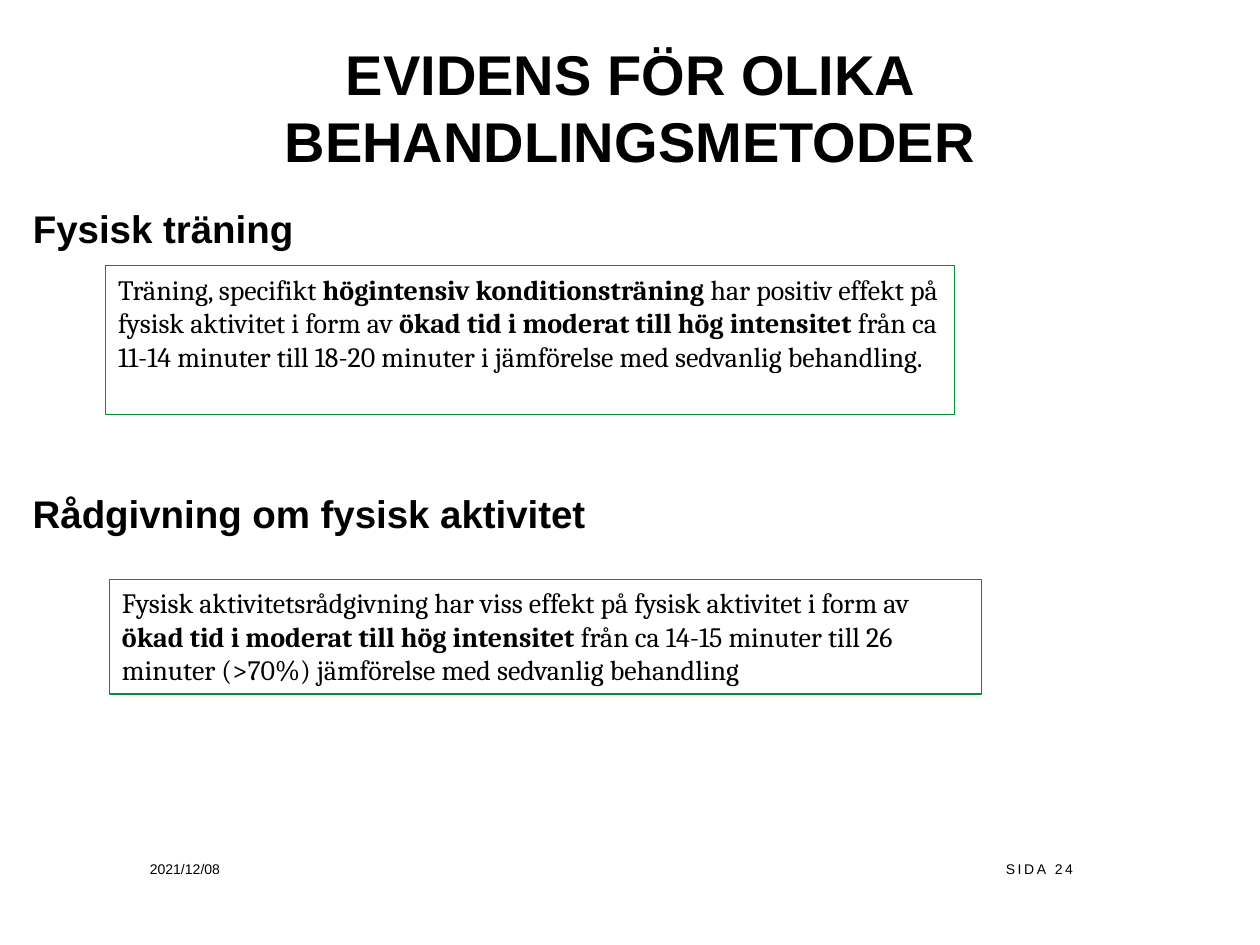
import pptx
import pptx.util
import pptx.dml.color
import pptx.enum.shapes
import pptx.enum.text

Cm = pptx.util.Cm
Pt = pptx.util.Pt
Align = pptx.enum.text.PP_ALIGN
Anchor = pptx.enum.text.MSO_ANCHOR
BLACK = pptx.dml.color.RGBColor(0, 0, 0)
WHITE = pptx.dml.color.RGBColor(255, 255, 255)
GREEN = pptx.dml.color.RGBColor(0, 0x90, 0x36)


def place(shape, box):
    shape.left, shape.top, shape.width, shape.height = [Cm(v) for v in box]


def label(shape, text, size, bold=False, align=Align.LEFT):
    frame = shape.text_frame
    frame.word_wrap = True
    frame.auto_size = pptx.enum.text.MSO_AUTO_SIZE.NONE
    frame.vertical_anchor = Anchor.MIDDLE
    para = frame.paragraphs[0]
    para.text = text
    para.alignment = align
    font = para.font
    font.name, font.size, font.bold = "Arial", Pt(size), bold
    font.color.rgb = BLACK
    return para


def add_text(slide, box):
    return slide.shapes.add_textbox(*[Cm(v) for v in box])


def add_note(slide, box, parts):
    note = slide.shapes.add_shape(
        pptx.enum.shapes.MSO_SHAPE.RECTANGLE, *[Cm(v) for v in box])
    note.shadow.inherit = False
    note.fill.solid()
    note.fill.fore_color.rgb = WHITE
    note.line.color.rgb = GREEN
    note.line.width = Pt(0.75)
    frame = note.text_frame
    frame.word_wrap = True
    frame.vertical_anchor = Anchor.TOP
    para = frame.paragraphs[0]
    para.alignment = Align.LEFT
    para.font.name, para.font.size = "Cambria", Pt(16)
    para.font.color.rgb = BLACK
    for text, bold in parts:
        run = para.add_run()
        run.text = text
        run.font.bold = bold


def add_part(slide, head, box, title, inner, parts):
    left, top, _, _ = box
    place(head, box)
    label(head, title, 22, True)
    right, down, width, height = inner
    add_note(slide, (left + right, top + down, width, height), parts)


def add_foot(slide, box):
    left, top, width, height = box
    date = add_text(slide, (left, top, 4, height))
    label(date, "2021/12/08", 8)
    page = add_text(slide, (left + width - 2.13, top, 2.13, height))
    para = label(page, "SIDA 24", 8, align=Align.CENTER)
    para.runs[0].font._element.set("spc", "150")


def main():
    deck = pptx.Presentation()
    deck.slide_width, deck.slide_height = Cm(25.4), Cm(19.05)
    slide = deck.slides.add_slide(deck.slide_layouts[5])

    add_part(slide, slide.shapes.title, (0.41, 3, 24.56, 3.18),
             "Fysisk träning", (1.72, 2.36, 17.12, 3), [
                 ("Träning, specifikt ", False),
                 ("högintensiv konditionsträning", True),
                 (" har positiv effekt på fysisk aktivitet i form av ", False),
                 ("ökad tid i moderat till hög intensitet ", True),
                 ("från ca 11-14 minuter till 18-20 minuter i jämförelse "
                  "med sedvanlig behandling.", False)])

    area = (0.41, 8.15, 21.54, 4.37)
    add_part(slide, add_text(slide, area), area,
             "Rådgivning om fysisk aktivitet", (1.8, 3.53, 17.58, 2.31), [
                 ("Fysisk aktivitetsrådgivning har viss effekt på fysisk "
                  "aktivitet i form av ", False),
                 ("ökad tid i moderat till hög intensitet ", True),
                 ("från ca 14-15 minuter till 26 minuter (>70%) jämförelse "
                  "med sedvanlig behandling", False)])

    banner = add_text(slide, (0, 0.56, 25.4, 3.18))
    label(banner, "EVIDENS FÖR OLIKA BEHANDLINGSMETODER", 32, True,
          Align.CENTER)
    add_foot(slide, (2.77, 17, 19.25, 1.02))
    deck.save("out.pptx")


if __name__ == "__main__":
    main()
